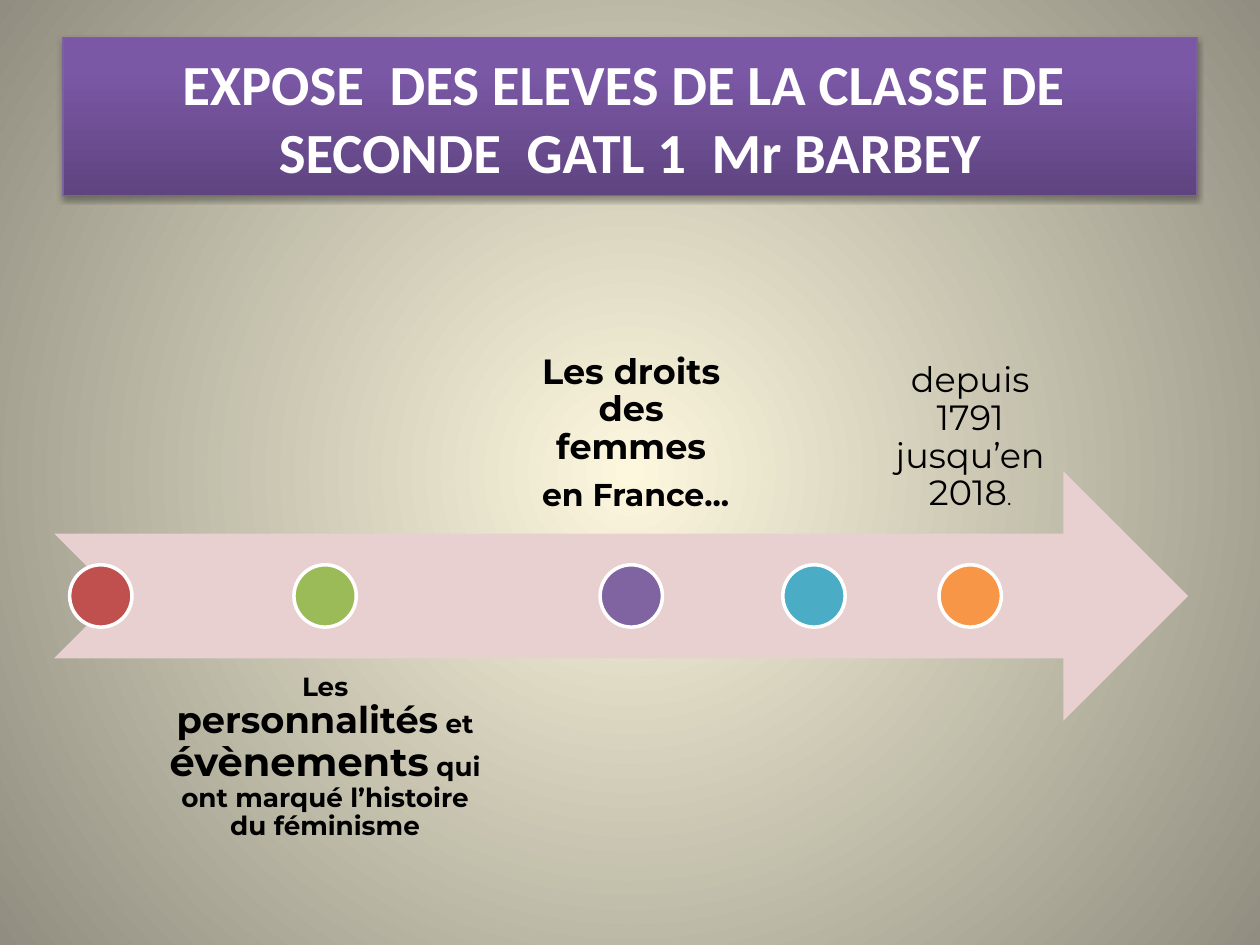
from lxml import etree
from pptx import Presentation
from pptx.dml.color import RGBColor
from pptx.enum.shapes import MSO_SHAPE
from pptx.enum.text import MSO_ANCHOR, MSO_AUTO_SIZE, PP_ALIGN
from pptx.oxml.ns import qn
from pptx.util import Inches, Pt

ARROW, CIRCLE = MSO_SHAPE.NOTCHED_RIGHT_ARROW, MSO_SHAPE.OVAL
TOP, MIDDLE, BOTTOM = MSO_ANCHOR.TOP, MSO_ANCHOR.MIDDLE, MSO_ANCHOR.BOTTOM
CENTER = PP_ALIGN.CENTER
TITLE_ONLY = 5

# Content
COLORS = {
    "white": "FFFFFF", "black": "000000", "arrow": "E8D0D0",
    "red": "C0504D", "green": "9BBB59", "purple": "8064A2",
    "blue": "4BACC6", "orange": "F79646", "title line": "7D60A0",
}
BACKGROUND_STOPS = [(0, "FCF7DD"), (100, "918E81")]
TITLE_STOPS = [(0, "5F4480"), (80, "7B58A6"), (100, "7C57A8")]
TITLE_LINES = ["EXPOSE  DES ELEVES DE LA CLASSE DE ", "SECONDE  GATL 1  Mr BARBEY"]

# Milestones: centre x, colour, label (paragraphs of (text, size) runs)
MILESTONES = [
    (0.80, "red", None),
    (2.58, "green", {"width": 2.72, "above": False, "bold": True, "inset": 0.12, "paras": [
        [("Les ", 15), ("personnalités", 21), (" et ", 15), ("évènements", 22.8),
         (" qui ont marqué l’histoire du féminisme", 15)]]}),
    (5.01, "purple", {"width": 2.07, "above": True, "bold": True, "inset": 0.16, "paras": [
        [("Les droits des femmes", 20)], [(" en France...", 18)]]}),
    (6.46, "blue", None),
    (7.70, "orange", {"width": 1.65, "above": True, "bold": False, "inset": 0.16, "paras": [
        [("depuis 1791 jusqu’en 2018", 20), (".", 12)]]}),
]

# Timeline geometry in inches
ARROW_LEFT, ARROW_TOP, ARROW_WIDTH, ARROW_HEIGHT = 0.43, 3.74, 9, 1.98
AXIS = ARROW_TOP + ARROW_HEIGHT / 2
SHAFT_HALF = ARROW_HEIGHT / 4
DOT = ARROW_HEIGHT / 4


def rgb(name):
    return RGBColor.from_string(COLORS[name])


def add_node(parent, tag, **attributes):
    node = etree.SubElement(parent, qn(tag))
    for key, value in attributes.items():
        node.set(key, str(value))
    return node


def set_gradient(fill, element, stops, angle=None):
    """Linear gradient with an angle in degrees, or radial from the centre."""
    fill.gradient()
    gradient = next(element.iter(qn("a:gradFill")))
    for child in list(gradient):
        gradient.remove(child)
    stop_list = add_node(gradient, "a:gsLst")
    for position, color in stops:
        stop = add_node(stop_list, "a:gs", pos=position * 1000)
        add_node(stop, "a:srgbClr", val=color)
    if angle is None:
        circle = add_node(gradient, "a:path", path="circle")
        add_node(circle, "a:fillToRect", l=50000, t=50000, r=50000, b=50000)
    else:
        add_node(gradient, "a:lin", ang=angle * 60000, scaled=0)


def add_run(para, text, size, font, color, bold):
    span = para.add_run()
    span.text = text
    span.font.size = Pt(size)
    span.font.name = font
    span.font.bold = bold
    span.font.color.rgb = rgb(color)


def add_shape(slide, kind, left, top, width, height, color):
    shape = slide.shapes.add_shape(
        kind, Inches(left), Inches(top), Inches(width), Inches(height))
    shape.shadow.inherit = False
    shape.fill.solid()
    shape.fill.fore_color.rgb = rgb(color)
    shape.line.fill.background()
    return shape


def add_label(slide, center, label):
    top = AXIS - SHAFT_HALF - ARROW_HEIGHT if label["above"] else AXIS + SHAFT_HALF
    box = slide.shapes.add_textbox(
        Inches(center - label["width"] / 2), Inches(top),
        Inches(label["width"]), Inches(ARROW_HEIGHT))
    frame = box.text_frame
    frame.word_wrap = True
    frame.vertical_anchor = BOTTOM if label["above"] else TOP
    inset = Inches(label["inset"])
    frame.margin_left = frame.margin_right = inset
    frame.margin_top = frame.margin_bottom = inset
    for index, runs in enumerate(label["paras"]):
        para = frame.paragraphs[0] if index == 0 else frame.add_paragraph()
        para.alignment = CENTER
        para.line_spacing = 0.9
        para.space_after = Pt(7)
        for text, size in runs:
            add_run(para, text, size, "Montserrat", "black", label["bold"])


def format_title(title):
    title.left, title.top = Inches(0.5), Inches(0.3)
    title.width, title.height = Inches(9), Inches(1.25)
    set_gradient(title.fill, title._element, TITLE_STOPS, 270)
    title.line.color.rgb = rgb("title line")
    title.line.width = Pt(0.75)
    # Soft shadow below the banner
    effects = add_node(title._element.spPr, "a:effectLst")
    shadow = add_node(effects, "a:outerShdw", blurRad=Pt(3.1), dist=Pt(1.8),
                      dir=90 * 60000, rotWithShape=0)
    add_node(add_node(shadow, "a:srgbClr", val=COLORS["black"]), "a:alpha", val=35000)
    frame = title.text_frame
    frame.word_wrap = True
    frame.auto_size = MSO_AUTO_SIZE.NONE
    frame.vertical_anchor = MIDDLE
    para = frame.paragraphs[0]
    para.alignment = CENTER
    for index, line in enumerate(TITLE_LINES):
        if index:
            para.add_line_break()
        add_run(para, line, 32.4, "Calibri", "white", True)


def main():
    deck = Presentation()
    deck.slide_width, deck.slide_height = Inches(10), Inches(7.5)
    slide = deck.slides.add_slide(deck.slide_layouts[TITLE_ONLY])
    set_gradient(slide.background.fill, slide._element, BACKGROUND_STOPS)
    format_title(slide.shapes.title)

    # Timeline arrow, dots and labels
    add_shape(slide, ARROW, ARROW_LEFT, ARROW_TOP, ARROW_WIDTH, ARROW_HEIGHT, "arrow")
    for center, color, label in MILESTONES:
        dot = add_shape(slide, CIRCLE, center - DOT / 2, AXIS - DOT / 2, DOT, DOT, color)
        dot.line.color.rgb = rgb("white")
        dot.line.width = Pt(2)
        if label:
            add_label(slide, center, label)
    deck.save("out.pptx")


if __name__ == "__main__":
    main()
